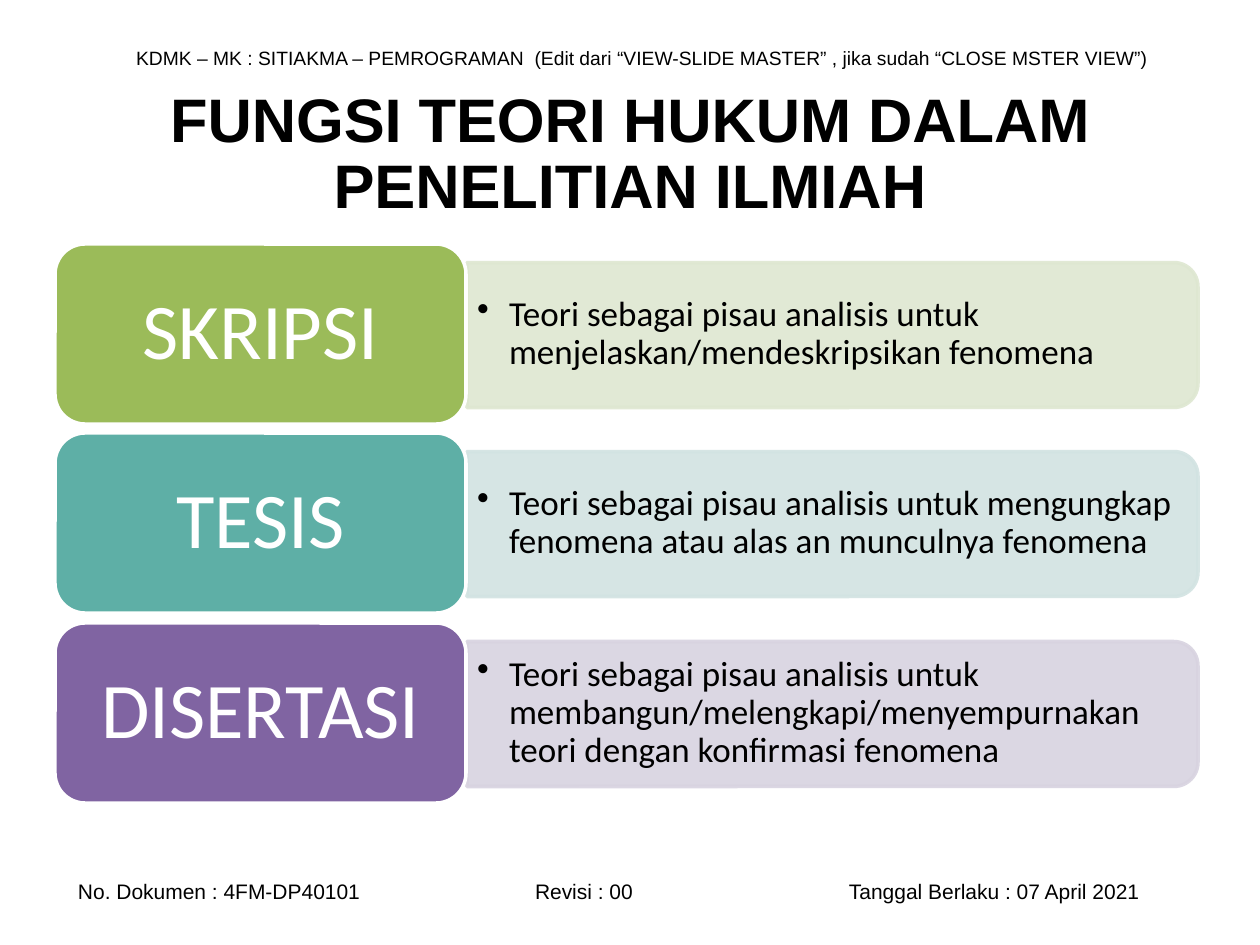
from dataclasses import dataclass

from lxml.etree import SubElement
from pptx import Presentation
from pptx.dml.color import RGBColor
from pptx.enum.shapes import MSO_SHAPE as Preset
from pptx.enum.text import MSO_ANCHOR as Anchor, PP_ALIGN as Align
from pptx.oxml.ns import qn
from pptx.util import Emu, Pt

PX = 914400 / 126
COLORS = {
    "black": "000000", "white": "FFFFFF",
    "green": "9BBB59", "green_pale": "DEE7D1",
    "teal": "5EAFA6", "teal_pale": "D2E3E2",
    "purple": "8064A2", "purple_pale": "D8D3E0",
}
FIRST_TOP = 244
TWO_ROWS = 379  # distance over two rows
LABEL_W, LABEL_H = 411, 180
BAND_LEFT, BAND_W, BAND_H = 467, 731, 145


@dataclass
class Level:
    name: str
    role: str
    color: str


LEVELS = [
    Level("SKRIPSI", "Teori sebagai pisau analisis untuk "
          "menjelaskan/mendeskripsikan fenomena", "green"),
    Level("TESIS", "Teori sebagai pisau analisis untuk mengungkap "
          "fenomena atau alas an munculnya fenomena", "teal"),
    Level("DISERTASI", "Teori sebagai pisau analisis untuk "
          "membangun/melengkapi/menyempurnakan teori dengan konfirmasi fenomena",
          "purple"),
]


def px(value: float) -> Emu:
    return Emu(round(value * PX))


def rgb(name: str) -> RGBColor:
    return RGBColor.from_string(COLORS[name])


def write(shape, text: str, size: float, font: str, color: str = "black",
          align=Align.LEFT, spacing: float = 1.0, insets=(13, 6), bold=False):
    """Fill a shape with one formatted paragraph and return the paragraph."""
    frame = shape.text_frame
    frame.word_wrap = True
    frame.vertical_anchor = Anchor.MIDDLE
    frame.margin_left = frame.margin_right = px(insets[0])
    frame.margin_top = frame.margin_bottom = px(insets[1])
    para = frame.paragraphs[0]
    para.text = text
    para.alignment = align
    para.line_spacing = spacing
    para.font.size = Pt(size)
    para.font.name = font
    para.font.bold = bold
    para.font.color.rgb = rgb(color)
    return para


def add_text_box(page, left: int, top: int, width: int, height: int):
    return page.shapes.add_textbox(px(left), px(top), px(width), px(height))


def add_block(page, preset, left: float, top: float, width: int, height: int,
              fill: str, line: str):
    block = page.shapes.add_shape(preset, px(left), px(top), px(width), px(height))
    block.shadow.inherit = False
    block.fill.solid()
    block.fill.fore_color.rgb = rgb(fill)
    block.line.color.rgb = rgb(line)
    block.line.width = Pt(2)
    return block


def add_bullet(para) -> None:
    props = para._p.get_or_add_pPr()
    props.set("marL", str(px(32)))
    props.set("indent", str(-px(32)))
    # The bullet has to come before the default run properties
    bullet = props.makeelement(qn("a:buChar"), {"char": "•"})
    props.find(qn("a:defRPr")).addprevious(bullet)


def add_tabs(para, stops: list[int]) -> None:
    props = para._p.get_or_add_pPr()
    tabs = props.makeelement(qn("a:tabLst"), {})
    for stop in stops:
        SubElement(tabs, qn("a:tab"), pos=str(px(stop)), algn="l")
    props.find(qn("a:defRPr")).addprevious(tabs)


def add_band(page, top: float, color: str) -> None:
    """Draw a pale band: an upright shape turned so its round end faces right."""
    left = BAND_LEFT + (BAND_W - BAND_H) / 2
    band = add_block(page, Preset.ROUND_2_SAME_RECTANGLE, left,
                     top - (BAND_W - BAND_H) / 2, BAND_H, BAND_W, color, color)
    band.rotation = 90
    for node in band._element.spPr.iter(qn("a:srgbClr")):
        SubElement(node, qn("a:alpha"), val="90000")


def add_level(page, level: Level, top: int) -> None:
    add_band(page, top + (LABEL_H - BAND_H) / 2 + 1, level.color + "_pale")
    role = add_text_box(page, BAND_LEFT, top + 25, 724, 130)
    add_bullet(write(role, level.role, 20, "Calibri", spacing=0.9, insets=(10, 5)))
    label = add_block(page, Preset.ROUNDED_RECTANGLE, 55, top, LABEL_W, LABEL_H,
                      level.color, "white")
    write(label, level.name, 45, "Calibri", "white", Align.CENTER, 0.9, (33, 20))


def main() -> None:
    deck = Presentation()
    deck.slide_width, deck.slide_height = px(1260), px(945)
    page = deck.slides.add_slide(deck.slide_layouts[5])

    header = add_text_box(page, 123, 39, 1052, 37)
    write(header, "KDMK – MK : SITIAKMA – PEMROGRAMAN  (Edit dari “VIEW-SLIDE "
          "MASTER” , jika sudah “CLOSE MSTER VIEW”)", 11, "Arial")
    footer = add_text_box(page, 25, 872, 1191, 38)
    para = write(footer, "No. Dokumen : 4FM-DP40101\tRevisi : 00\t"
                 "Tanggal Berlaku : 07 April 2021", 12, "Arial", insets=(53, 6))
    add_tabs(para, [457, 771])

    title = page.shapes.title
    title.left, title.top, title.width, title.height = map(px, (63, 77, 1134, 157))
    write(title, "FUNGSI TEORI HUKUM DALAM PENELITIAN ILMIAH", 35.1, "Arial",
          align=Align.CENTER, spacing=0.9, bold=True)

    for index, level in enumerate(LEVELS):
        add_level(page, level, FIRST_TOP + index * TWO_ROWS // 2)
    deck.save("out.pptx")


if __name__ == "__main__":
    main()
